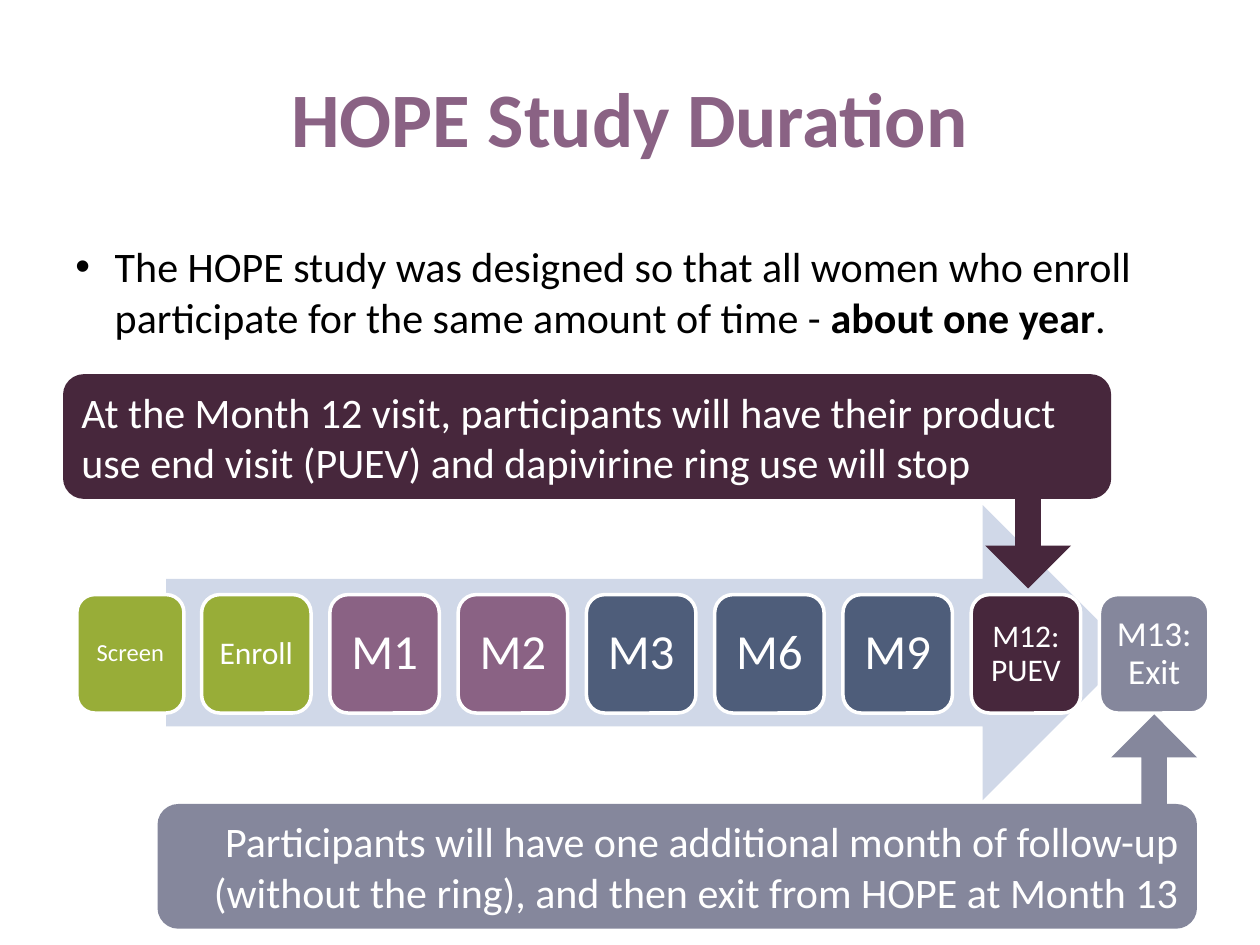
from lxml import etree
from pptx import Presentation
from pptx.dml.color import RGBColor
from pptx.enum.shapes import MSO_SHAPE
from pptx.enum.text import MSO_ANCHOR, PP_ALIGN
from pptx.oxml.ns import qn
from pptx.util import Pt

ROUNDED = MSO_SHAPE.ROUNDED_RECTANGLE
RIGHT_ARROW = MSO_SHAPE.RIGHT_ARROW
DOWN_ARROW = MSO_SHAPE.DOWN_ARROW
LEFT, CENTER, RIGHT = PP_ALIGN.LEFT, PP_ALIGN.CENTER, PP_ALIGN.RIGHT
TOP, MIDDLE = MSO_ANCHOR.TOP, MSO_ANCHOR.MIDDLE
TITLE_ONLY = 5
FONT = "Calibri"

COLORS = {
    "white": "FFFFFF",
    "black": "000000",
    "timeline": "D0D8E8",
    "start": "98AD38",
    "monthly": "8A6284",
    "quarterly": "4E5D7A",
    "end_of_use": "47273C",
    "exit": "85879C",
}

# label, colour, text size, inner margin
VISITS = [
    ("Screen", "start", 14, 4.3),
    ("Enroll", "start", 18, 5),
    ("M1", "monthly", 28, 8.5),
    ("M2", "monthly", 28, 8.5),
    ("M3", "quarterly", 28, 8.5),
    ("M6", "quarterly", 28, 8.5),
    ("M9", "quarterly", 28, 8.5),
    ("M12: PUEV", "end_of_use", 18, 5),
    ("M13:\vExit", "exit", 20, 5.8),
]
VISIT_LEFT, VISIT_TOP = 41.9, 339.8
VISIT_WIDTH, VISIT_HEIGHT, VISIT_PITCH = 62.6, 67.7, 73.3


def rgb(name):
    return RGBColor.from_string(COLORS[name])


def set_attributes(target, values):
    for name, value in values.items():
        setattr(target, name, value)


def format_font(font, size, color, bold=False):
    set_attributes(font, {"name": FONT, "size": Pt(size), "bold": bold})
    font.color.rgb = rgb(color)


def write_text(shape, runs, size, color="white", align=LEFT, anchor=MIDDLE):
    """Fill the shape with one paragraph made of (text, bold) runs."""
    frame = shape.text_frame
    set_attributes(frame, {"word_wrap": True, "vertical_anchor": anchor})
    paragraph = frame.paragraphs[0]
    paragraph.alignment = align
    for text, bold in runs:
        for index, line in enumerate(text.split("\v")):
            if index:
                paragraph.add_line_break()
            run = paragraph.add_run()
            run.text = line
            format_font(run.font, size, color, bold)
    return paragraph


def add_block(slide, kind, box, color, outlined=False):
    shape = slide.shapes.add_shape(kind, *map(Pt, box))
    shape.shadow.inherit = False
    shape.fill.solid()
    shape.fill.fore_color.rgb = rgb(color)
    if outlined:
        shape.line.color.rgb = rgb("white")
        shape.line.width = Pt(2)
    else:
        shape.line.fill.background()
    return shape


def add_title(slide, text):
    title = slide.shapes.title
    set_attributes(title, {"left": Pt(36), "top": Pt(21.6),
                           "width": Pt(648), "height": Pt(90)})
    write_text(title, [(text, True)], 44, "monthly", CENTER)


def add_bullet(slide, runs):
    text_box = slide.shapes.add_textbox(Pt(36), Pt(134), Pt(648), Pt(376.6))
    paragraph = write_text(text_box, runs, 24, "black", anchor=TOP)
    paragraph.space_before = Pt(4.8)
    properties = paragraph._p.get_or_add_pPr()
    properties.set("marL", str(Pt(22.5)))
    properties.set("indent", str(-Pt(22.5)))
    font = etree.SubElement(properties, qn("a:buFont"))
    font.set("typeface", "Arial")
    bullet = etree.SubElement(properties, qn("a:buChar"))
    bullet.set("char", "•")


def add_visit(slide, index, label, color, size, margin):
    box = (VISIT_LEFT + index * VISIT_PITCH, VISIT_TOP,
           VISIT_WIDTH, VISIT_HEIGHT)
    if index == 0:
        box = (43.9, VISIT_TOP, 61.2, VISIT_HEIGHT)
    shape = add_block(slide, ROUNDED, box, color, outlined=True)
    sides = ("left", "top", "right", "bottom")
    set_attributes(shape.text_frame,
                   {f"margin_{side}": Pt(margin) for side in sides})
    paragraph = write_text(shape, [(label, False)], size, align=CENTER)
    paragraph.line_spacing = 0.9


def add_callout(slide, box, text, color, align):
    shape = add_block(slide, ROUNDED, box, color)
    write_text(shape, [(text, False)], 24, align=align)


def add_pointer(slide, box, color, rotation=0):
    arrow = add_block(slide, DOWN_ARROW, box, color)
    arrow.adjustments[0] = 0.3
    arrow.rotation = rotation


def main():
    presentation = Presentation()
    presentation.slide_width, presentation.slide_height = Pt(720), Pt(540)
    slide = presentation.slides.add_slide(
        presentation.slide_layouts[TITLE_ONLY])

    add_title(slide, "HOPE Study Duration")
    add_bullet(slide, [
        ("The HOPE study was designed so that all women who enroll "
         "participate for the same amount of time - ", False),
        ("about one year", True),
        (".", False),
    ])

    add_block(slide, RIGHT_ARROW, (95, 288.7, 550.8, 168.5), "timeline")
    for index, visit in enumerate(VISITS):
        add_visit(slide, index, *visit)

    add_pointer(slide, (563, 269.3, 49, 67), "end_of_use")
    add_callout(slide, (36, 213.8, 599, 71.3),
                "At the Month 12 visit, participants will have their product "
                "use end visit (PUEV) and dapivirine ring use will stop",
                "end_of_use", LEFT)
    add_callout(slide, (90, 459.4, 594, 71.3),
                "Participants will have one additional month of follow-up "
                "(without the ring), and then exit from HOPE at Month 13",
                "exit", RIGHT)
    add_pointer(slide, (635, 408.2, 49, 69.8), "exit", rotation=180)

    presentation.save("out.pptx")


if __name__ == "__main__":
    main()
